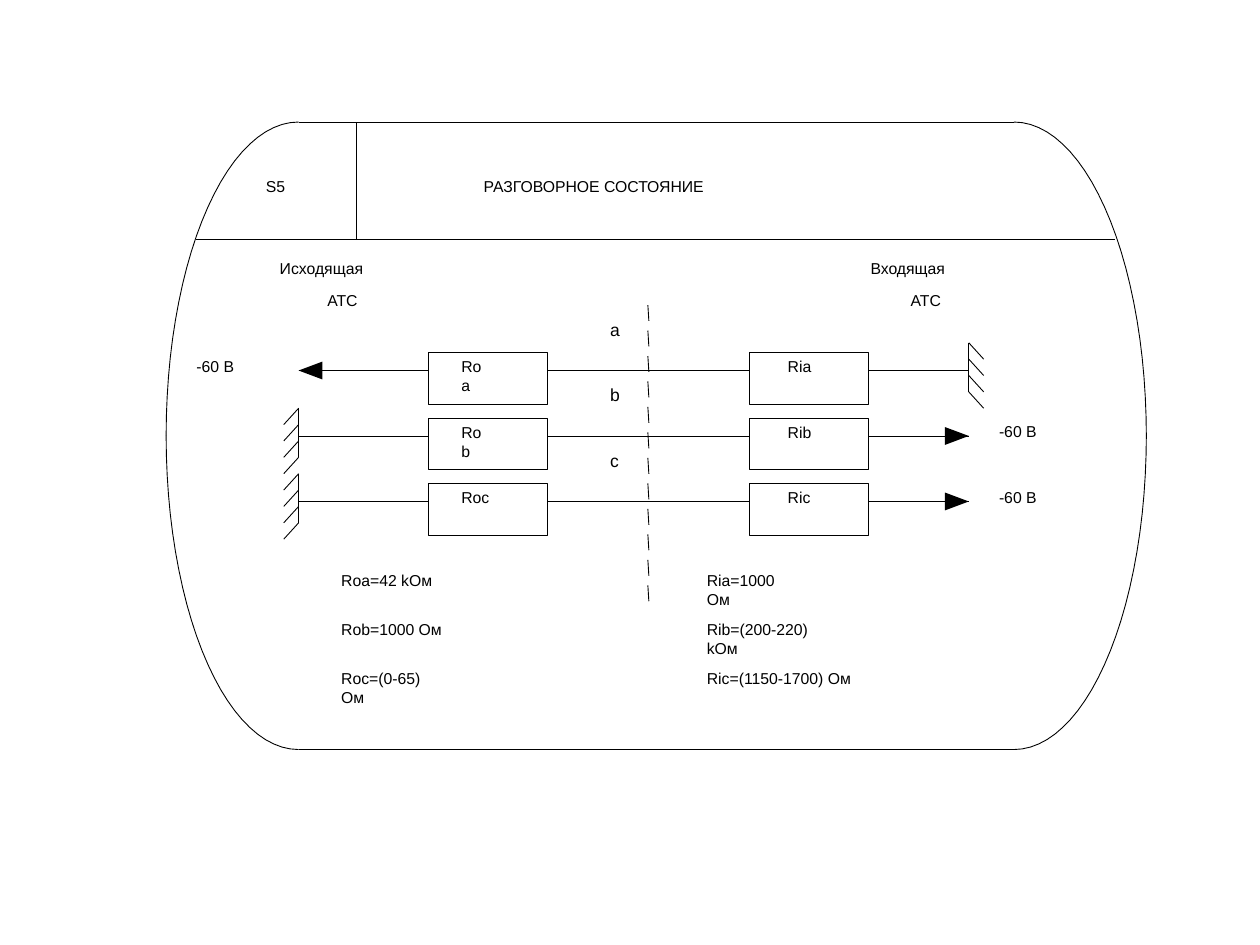
from dataclasses import dataclass
from math import cos, pi, sin
from pptx import Presentation
from pptx.dml.color import RGBColor as Color
from pptx.enum.shapes import MSO_CONNECTOR as Link, MSO_SHAPE as Form
from pptx.oxml.ns import qn
from pptx.util import Cm, Pt


@dataclass(frozen=True)
class Theme:
    ink: Color = Color(0, 0, 0)
    paper: Color = Color(255, 255, 255)
    font: str = "Arial"
    body: float = 9
    wire: float = 10
    stroke: float = 0.5


@dataclass(frozen=True)
class Box:
    x: float
    y: float
    w: float
    h: float


theme = Theme()


def text(slide, words, x, y, w, h=0.38, size=theme.body, wrap=False):
    frame = slide.shapes.add_textbox(Cm(x), Cm(y), Cm(w), Cm(h)).text_frame
    frame.margin_left = frame.margin_right = 0
    frame.margin_top = frame.margin_bottom = 0
    frame.word_wrap = wrap
    run = frame.paragraphs[0].add_run()
    run.text = words
    run.font.name = theme.font
    run.font.size = Pt(size)
    run.font.color.rgb = theme.ink


def ink(line):
    line.color.rgb = theme.ink
    line.width = Pt(theme.stroke)


def line(slide, x1, y1, x2, y2):
    link = slide.shapes.add_connector(
        Link.STRAIGHT, Cm(x1), Cm(y1), Cm(x2), Cm(y2))
    ink(link.line)
    props = link._element.spPr
    props.append(props.makeelement(qn("a:effectLst"), {}))


def outline(slide, points, solid=False):
    first, *rest = [(Cm(x), Cm(y)) for x, y in points]
    path = slide.shapes.build_freeform(*first)
    path.add_line_segments(rest, close=solid)
    shape = path.convert_to_shape()
    shape.shadow.inherit = False
    if solid:
        shape.fill.solid()
        shape.fill.fore_color.rgb = theme.ink
        shape.line.fill.background()
    else:
        shape.fill.background()
        ink(shape.line)


def case(slide, box):
    bulge, steps, half = 2.67, 25, box.h / 2
    left, right = box.x + bulge, box.x + box.w - bulge
    for mid, side in ((left, -1), (right, 1)):
        for way in (-1, 1):
            turns = [pi / 2 * i / steps for i in range(steps + 1)]
            outline(slide, [(mid + side * bulge * cos(t),
                             box.y + half + way * half * sin(t))
                            for t in turns])
    for y in (box.y, box.y + box.h):
        line(slide, left, y, right, y)


def header(slide, box):
    base = box.y + box.h
    line(slide, box.x, base, box.x + box.w, base)
    line(slide, box.x + 3.23, base, box.x + 3.23, box.y + 0.03)
    text(slide, "S5", box.x + 1.4, box.y + 1.1, 0.4)
    text(slide, "РАЗГОВОРНОЕ СОСТОЯНИЕ", box.x + 5.79, box.y + 1.1, 4.52)


def names(slide, box):
    for word, w, x, shift in (("Исходящая", 1.7, box.x, 0.96),
                              ("Входящая", 1.52, box.x + 11.91, 0.81)):
        text(slide, word, x, box.y, w)
        text(slide, "АТС", x + shift, box.y + 0.66, 0.64)


def border(slide, box):
    count, dash = 12, 0.32
    pitch = (box.h - dash) / (count - 1)
    for i in range(count):
        y = box.y + i * pitch
        line(slide, box.x, y, box.x + box.w, y + dash)


def arrow(slide, x, y, side):
    back = x - side * 0.48
    outline(slide, [(back, y - 0.18), (x, y), (back, y + 0.18)], solid=True)
    text(slide, "-60 В", 3.96 if side < 0 else 20.14, y - 0.28, 0.76)


def ground(slide, x, y, side):
    top, step = y - 0.56, 0.33
    line(slide, x, top + 3 * step, x, top)
    for i in range(4):
        start = top + i * step
        line(slide, x, start, x + side * 0.3, start + step)


def resistor(slide, name, x, y, inset, w):
    body = slide.shapes.add_shape(Form.RECTANGLE, Cm(x), Cm(y - 0.36),
                                  Cm(2.4), Cm(1.04))
    body.shadow.inherit = False
    body.fill.solid()
    body.fill.fore_color.rgb = theme.paper
    ink(body.line)
    text(slide, name, x + inset, y - 0.27, w)


def circuit(slide, box):
    rows = (("а", "Roa", "Ria", arrow, ground),
            ("b", "Rob", "Rib", ground, arrow),
            ("c", "Roc", "Ric", ground, arrow))
    pitch = box.h / (len(rows) - 1)
    end = box.x + box.w
    for i, (wire, near, far, start, stop) in enumerate(rows):
        y = box.y + i * pitch
        line(slide, box.x, y, end, y)
        start(slide, box.x, y, -1)
        stop(slide, end, y, 1)
        text(slide, wire, box.x + 6.28, y - 1.04, 0.2, 0.43, theme.wire)
        resistor(slide, near, box.x + 2.62, y, 0.66, 0.58)
        resistor(slide, far, box.x + 9.09, y, 0.77, 0.48)


def values(slide, box):
    sides = ((("Roa=42 kОм", 2.2), ("Rob=1000 Ом", 2.2),
              ("Roc=(0-65) Ом", 2)),
             (("Ria=1000 Ом", 1.8), ("Rib=(200-220) kОм", 2.5),
              ("Ric=(1150-1700) Ом", 3.2)))
    for i, side in enumerate(sides):
        for j, (words, w) in enumerate(side):
            text(slide, words, box.x + i * box.w, box.y + j * box.h / 2, w,
                 wrap=True)


def main():
    deck = Presentation()
    deck.slide_width, deck.slide_height = Cm(25.4), Cm(19.05)
    slide = deck.slides.add_slide(deck.slide_layouts[6])
    case(slide, Box(3.35, 2.46, 19.76, 12.65))
    header(slide, Box(3.96, 2.46, 18.52, 2.37))
    names(slide, Box(5.64, 5.21, 13.5, 1.04))
    border(slide, Box(13.06, 6.15, 0.02, 5.97))
    circuit(slide, Box(6.02, 7.47, 13.51, 2.64))
    values(slide, Box(6.88, 11.51, 7.37, 1.98))
    deck.save("out.pptx")


if __name__ == "__main__":
    main()
